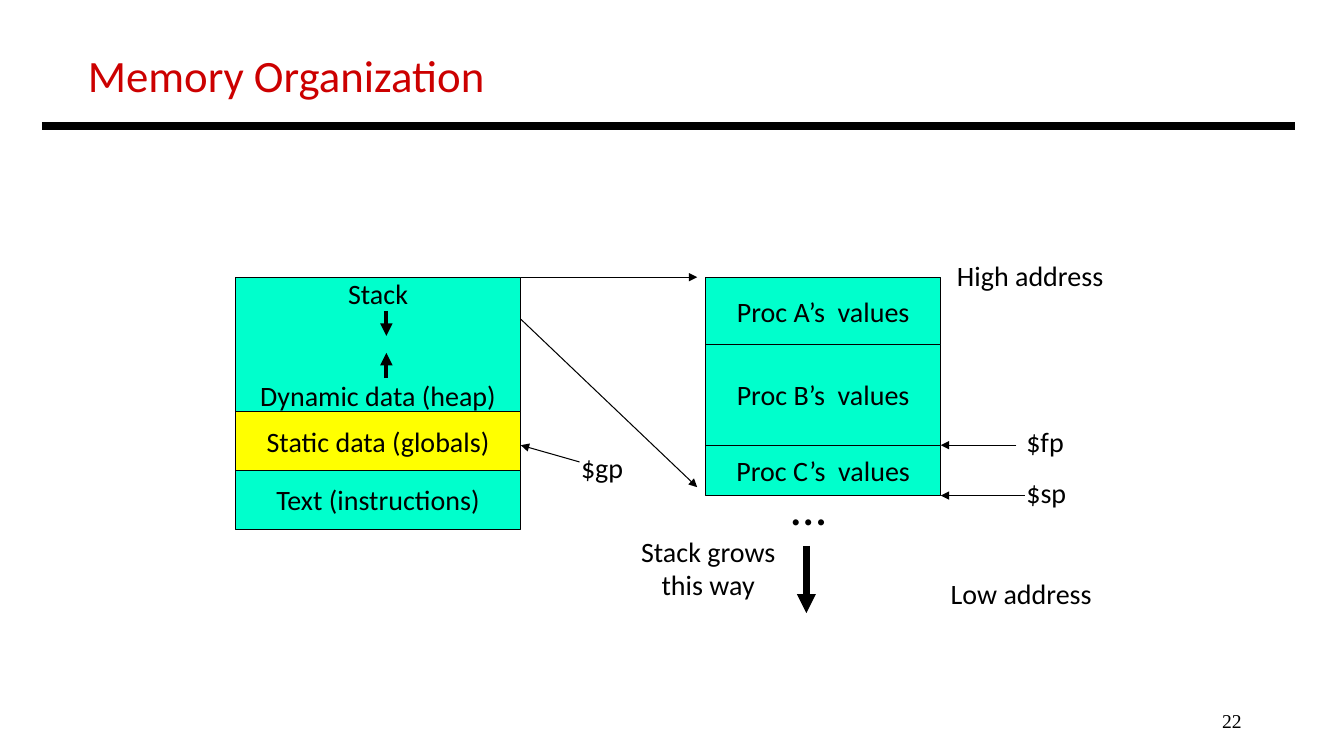
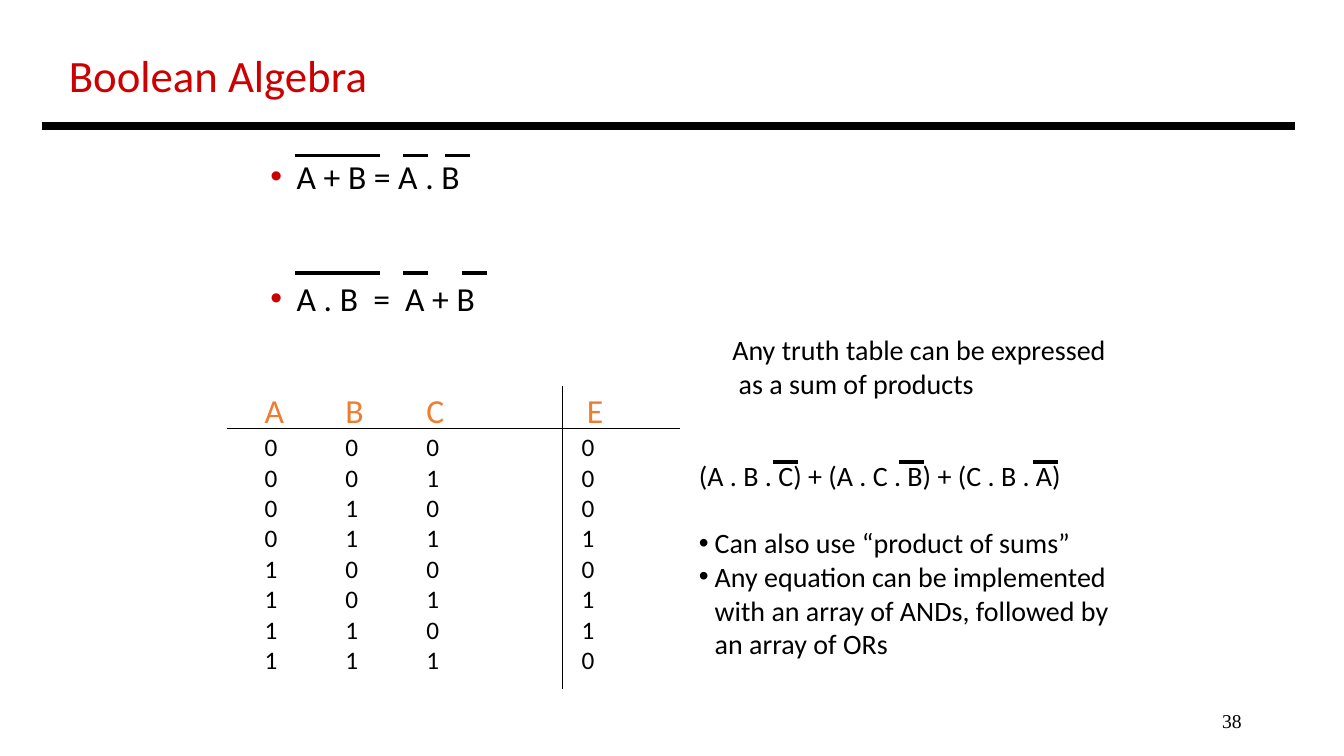
from dataclasses import dataclass
from typing import Optional

from lxml.etree import SubElement
from pptx import Presentation
from pptx.dml.color import RGBColor
from pptx.enum.shapes import MSO_CONNECTOR as CONN, MSO_SHAPE as SHAPE
from pptx.enum.text import MSO_ANCHOR as ANCHOR, MSO_AUTO_SIZE as AUTO, PP_ALIGN as ALIGN
from pptx.oxml.ns import qn
from pptx.util import Emu, Pt

EMU_PER_PX = 9525
BLACK = RGBColor(0x00, 0x00, 0x00)
RED = RGBColor(0xCC, 0x00, 0x00)
TEAL = RGBColor(0x00, 0xFF, 0xCC)
YELLOW = RGBColor(0xFF, 0xFF, 0x00)
ORANGE = RGBColor(0xED, 0x7D, 0x31)
BODY_FONT = "Calibri"
NUMBER_FONT = "Times New Roman"
PLAIN_TABLE = "{2D5ABB26-0587-4C30-8999-92F81FD0307C}"
TITLE_ONLY, TWO_CONTENT = 5, 3


@dataclass(frozen=True)
class Box:
    x: int
    y: int
    w: int
    h: int


@dataclass(frozen=True)
class Style:
    size: int = 20
    color: RGBColor = BLACK
    font: str = BODY_FONT
    align: ALIGN = ALIGN.LEFT


@dataclass(frozen=True)
class Para:
    text: str
    before: int = 0
    left: int = 0
    bullet: Optional[RGBColor] = None


@dataclass(frozen=True)
class Block:
    box: Box
    fill: RGBColor
    paras: tuple[Para, ...]


@dataclass(frozen=True)
class Label:
    box: Box
    paras: tuple[Para, ...]
    style: Style = Style()


@dataclass(frozen=True)
class Line:
    x1: int
    y1: int
    x2: int
    y2: int
    weight: float = 0.75
    arrow: bool = True


CENTERED = Style(align=ALIGN.CENTER)


def px(n: int) -> Emu:
    return Emu(n * EMU_PER_PX)


def place(sp, box: Box) -> None:
    sp.left, sp.top, sp.width, sp.height = map(px, (box.x, box.y, box.w, box.h))


def set_bullet(p, para: Para) -> None:
    pPr = p._p.get_or_add_pPr()
    pPr.set("marL", str(px(para.left)))
    pPr.set("indent", str(px(-para.left if para.bullet is not None else 0)))
    if para.bullet is None:
        SubElement(pPr, qn("a:buNone"))
        return
    clr = SubElement(pPr, qn("a:buClr"))
    SubElement(clr, qn("a:srgbClr"), val=str(para.bullet))
    SubElement(pPr, qn("a:buFont"), typeface="Arial")
    SubElement(pPr, qn("a:buChar"), char="•")


def write(tf, paras: tuple[Para, ...], style: Style) -> None:
    for i, para in enumerate(paras):
        p = tf.add_paragraph() if i else tf.paragraphs[0]
        p.alignment = style.align
        p.space_before = Pt(para.before)
        set_bullet(p, para)
        r = p.add_run()
        r.text = para.text
        r.font.name, r.font.size = style.font, Pt(style.size)
        r.font.color.rgb = style.color


def fill_placeholder(sp, box: Box, paras: tuple[Para, ...], style: Style) -> None:
    place(sp, box)
    tf = sp.text_frame
    tf.auto_size, tf.word_wrap, tf.vertical_anchor = AUTO.NONE, True, ANCHOR.TOP
    write(tf, paras, style)


def add_label(s, label: Label, anchor: ANCHOR = ANCHOR.TOP, wrap: bool = False) -> None:
    sp = s.shapes.add_textbox(0, 0, 0, 0)
    place(sp, label.box)
    tf = sp.text_frame
    tf.word_wrap, tf.vertical_anchor = wrap, anchor
    write(tf, label.paras, label.style)


def add_block(s, block: Block) -> None:
    sp = s.shapes.add_shape(SHAPE.RECTANGLE, 0, 0, 0, 0)
    place(sp, block.box)
    sp.shadow.inherit = False
    sp.fill.solid()
    sp.fill.fore_color.rgb = block.fill
    sp.line.color.rgb, sp.line.width = BLACK, Pt(0.75)
    tf = sp.text_frame
    tf.word_wrap, tf.vertical_anchor = False, ANCHOR.MIDDLE
    write(tf, block.paras, CENTERED)


def add_line(s, line: Line) -> None:
    ends = map(px, (line.x1, line.y1, line.x2, line.y2))
    sp = s.shapes.add_connector(CONN.STRAIGHT, *ends)
    sp.line.color.rgb, sp.line.width = BLACK, Pt(line.weight)
    if line.arrow:
        SubElement(sp.line._get_or_add_ln(), qn("a:tailEnd"), type="triangle")
    SubElement(sp._element.spPr, qn("a:effectLst"))


def add_overbar(s, x: int, y: int, w: int = 24) -> None:
    add_line(s, Line(x, y, x + w, y, 2.25, False))


def add_slide(prs, layout: int, title: str, title_x: int, number: str):
    s = prs.slides.add_slide(prs.slide_layouts[layout])
    fill_placeholder(s.shapes.title, Box(title_x, 41, 800, 61), (Para(title),),
                     Style(32, RED))
    add_line(s, Line(40, 120, 1233, 120, 6, False))
    add_label(s, Label(Box(904, 667, 288, 38), (Para(number),),
                       Style(14, BLACK, NUMBER_FONT, ALIGN.RIGHT)), ANCHOR.MIDDLE, True)
    return s


def add_truth_table(s) -> None:
    widths = (77, 77, 148, 96)
    outputs = "00010110"
    rows = ["ABCE"] + [f"{i:03b}{e}" for i, e in enumerate(outputs)]
    frame = s.shapes.add_table(len(rows), len(widths), px(252), px(373),
                               px(sum(widths)), px(39 + 29 * len(outputs)))
    table = frame.table
    table.first_row = table.horz_banding = False
    table._tbl.tblPr.find(qn("a:tableStyleId")).text = PLAIN_TABLE
    for column, w in zip(table.columns, widths):
        column.width = px(w)
    for i, values in enumerate(rows):
        header = i == 0
        table.rows[i].height = px(39 if header else 29)
        style = Style(24, ORANGE) if header else Style(18)
        for j, value in enumerate(values):
            cell = table.cell(i, j)
            cell.fill.background()
            cell.margin_left = px(5 if header and value == "E" else 0)
            cell.margin_right = cell.margin_top = cell.margin_bottom = 0
            write(cell.text_frame, (Para(value),), style)
    add_line(s, Line(216, 408, 648, 408, arrow=False))
    add_line(s, Line(536, 368, 536, 656, arrow=False))


def build_memory(prs) -> None:
    s = add_slide(prs, TITLE_ONLY, "Memory Organization", 74, "22")
    stack = (Para("Stack"), Para("Dynamic data (heap)", before=49))
    memory = ((128, TEAL, stack),
              (56, YELLOW, (Para("Static data (globals)"),)),
              (56, TEAL, (Para("Text (instructions)"),)))
    frames = tuple((h, TEAL, (Para(f"Proc {name}’s  values"),))
                   for name, h in (("A", 64), ("B", 96), ("C", 48)))
    for x, w, column in ((224, 272, memory), (672, 224, frames)):
        y = 264
        for h, fill, paras in column:
            add_block(s, Block(Box(x, y, w, h), fill, paras))
            y += h
    for label in (
        Label(Box(744, 448, 53, 68), (Para("…"),), Style(36)),
        Label(Box(902, 241, 160, 42), (Para("High address"),)),
        Label(Box(896, 544, 155, 42), (Para("Low address"),)),
        Label(Box(600, 504, 149, 74), (Para("Stack grows"), Para("this way")), CENTERED),
        Label(Box(968, 400, 57, 42), (Para("$fp"),)),
        Label(Box(968, 448, 58, 42), (Para("$sp"),)),
        Label(Box(544, 424, 60, 42), (Para("$gp"),)),
    ):
        add_label(s, label)
    for line in (
        Line(368, 296, 368, 320, 3),
        Line(368, 360, 368, 336, 3),
        Line(768, 520, 768, 584, 4.5),
        Line(496, 264, 664, 264),
        Line(496, 304, 664, 464),
        Line(968, 424, 896, 424),
        Line(976, 472, 896, 472),
        Line(552, 440, 496, 424),
    ):
        add_line(s, line)


def build_boolean(prs) -> None:
    s = add_slide(prs, TWO_CONTENT, "Boolean Algebra", 56, "38")
    laws, forms = s.placeholders[1], s.placeholders[2]
    fill_placeholder(laws, Box(248, 144, 320, 165), (
        Para("A + B = A . B", left=25, bullet=RED),
        Para("A . B  =  A + B", before=58, left=25, bullet=RED),
    ), Style(24))
    fill_placeholder(forms, Box(656, 432, 416, 204), (
        Para("(A . B . C) + (A . C . B) + (C . B . A)"),
        Para("Can also use “product of sums”", before=24, left=15, bullet=BLACK),
        Para("Any equation can be implemented with an array of ANDs, "
             "followed by an array of ORs", left=15, bullet=BLACK),
    ), Style())
    add_label(s, Label(Box(688, 312, 378, 74), (
        Para("Any truth table can be expressed"),
        Para("as a sum of products", left=6),
    )))
    add_truth_table(s)
    for y, second in ((148, 424), (260, 440)):
        add_overbar(s, 281, y, 81)
        add_overbar(s, 384, y)
        add_overbar(s, second, y)
    for x in (736, 856, 984):
        add_overbar(s, x, 440)


def main() -> None:
    prs = Presentation()
    prs.slide_width, prs.slide_height = px(1280), px(720)
    build_memory(prs)
    build_boolean(prs)
    prs.save("out.pptx")


if __name__ == "__main__":
    main()
